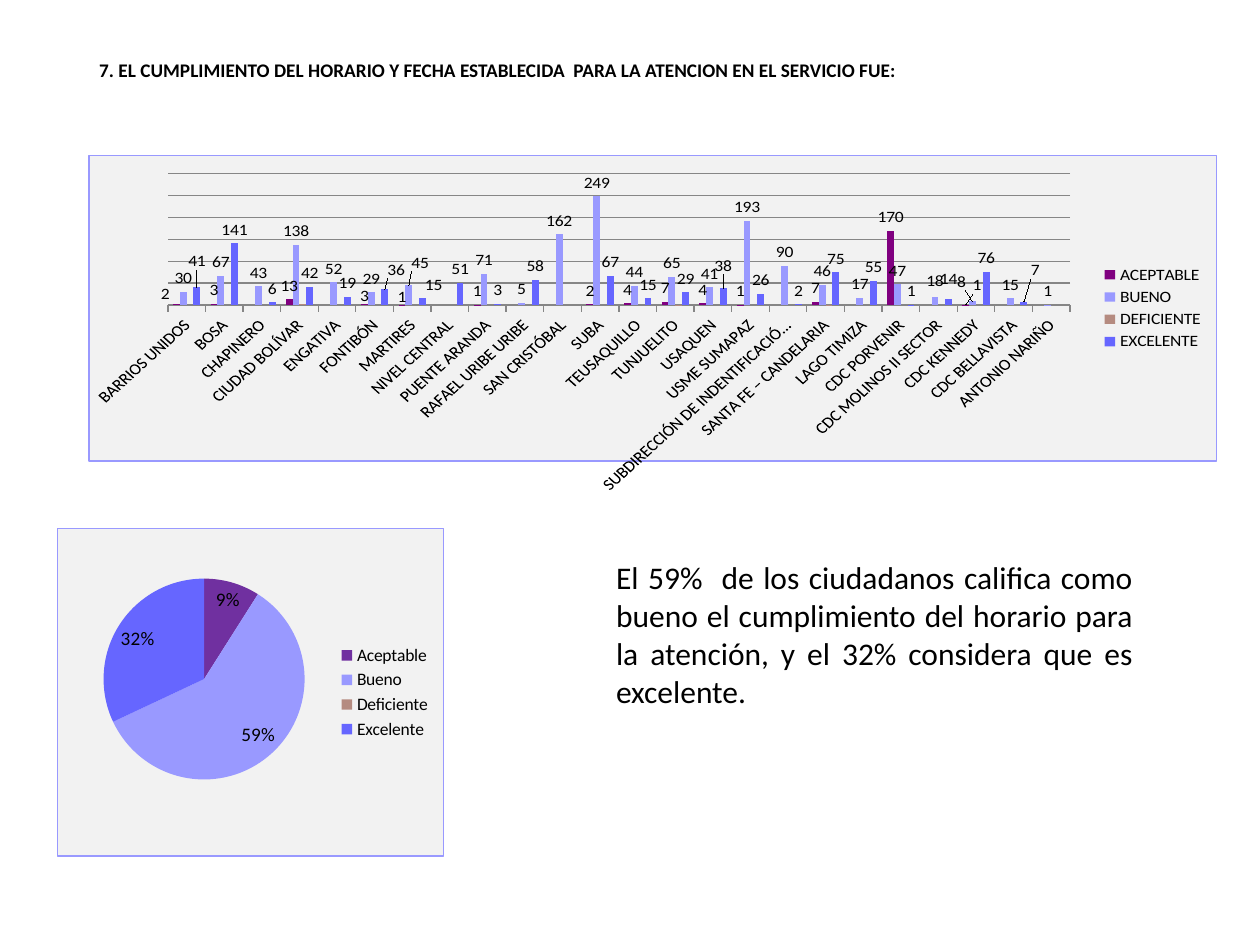
import pptx
import pptx.chart.data
import pptx.dml.color
import pptx.enum.chart
import pptx.enum.text
import pptx.oxml
import pptx.oxml.ns
import pptx.util
from dataclasses import dataclass

Cm, Pt = pptx.util.Cm, pptx.util.Pt
CHART = pptx.enum.chart
TEXT = pptx.enum.text
qn = pptx.oxml.ns.qn
NAMESPACES = pptx.oxml.ns.nsdecls("c", "a")


@dataclass(frozen=True)
class Theme:
    font: str = "Calibri"
    ink: str = "000000"
    panel: str = "F2F2F2"
    border: str = "9999FF"
    grid: str = "868686"
    title_size: int = 11
    body_size: int = 18
    chart_size: int = 10
    percent_size: int = 11
    localities: tuple = ("800080", "9999FF", "B58B80", "6666FF")
    overall: tuple = ("7030A0", "9999FF", "B58B80", "6666FF")


THEME = Theme()

TITLE = ("7. EL CUMPLIMIENTO DEL HORARIO Y FECHA ESTABLECIDA  PARA LA "
         "ATENCION EN EL SERVICIO FUE:")
FINDING = ("El 59%  de los ciudadanos califica como bueno el cumplimiento del "
           "horario para la atención, y el 32% considera que es excelente. ")

# Locality: aceptable, bueno, deficiente, excelente
RATINGS = {
    "BARRIOS UNIDOS": (2, 30, None, 41),
    "BOSA": (3, 67, None, 141),
    "CHAPINERO": (None, 43, None, 6),
    "CIUDAD BOLÍVAR": (13, 138, 3, 42),
    "ENGATIVA": (None, 52, None, 19),
    "FONTIBÓN": (3, 29, None, 36),
    "MARTIRES": (1, 45, None, 15),
    "NIVEL CENTRAL": (None, None, None, 51),
    "PUENTE ARANDA": (1, 71, None, 3),
    "RAFAEL URIBE URIBE": (None, 5, None, 58),
    "SAN CRISTÓBAL": (None, 162, None, None),
    "SUBA": (2, 249, None, 67),
    "TEUSAQUILLO": (4, 44, None, 15),
    "TUNJUELITO": (7, 65, 1, 29),
    "USAQUEN": (4, 41, None, 38),
    "USME SUMAPAZ": (1, 193, None, 26),
    "SUBDIRECCIÓN DE INDENTIFICACIÓN Y CARACTERIZACIÓN": (None, 90, None, 2),
    "SANTA FE – CANDELARIA": (7, 46, 1, 75),
    "LAGO TIMIZA": (None, 17, None, 55),
    "CDC PORVENIR": (170, 47, None, 1),
    "CDC MOLINOS II SECTOR": (None, 18, None, 14),
    "CDC KENNEDY": (1, 8, None, 76),
    "CDC BELLAVISTA": (None, 15, None, 7),
    "ANTONIO NARIÑO": (None, 1, None, None),
}
LEVELS = ("ACEPTABLE", "BUENO", "DEFICIENTE", "EXCELENTE")
LABELLED = ("ACEPTABLE", "BUENO", "EXCELENTE")
OVERALL = {"Aceptable": 9, "Bueno": 59, "Deficiente": 0, "Excelente": 32}

# Shifts that keep crowded labels apart, as fractions of the chart
LABEL_SHIFTS = {
    "ACEPTABLE": {0: (-0.01, 0.01), 5: (0, 0.02), 6: (0, 0.02), 21: (0.01, -0.02)},
    "BUENO": {6: (0.01, -0.03), 20: (0, -0.01), 21: (-0.01, -0.02)},
    "EXCELENTE": {0: (0, -0.04), 5: (0.01, -0.02), 6: (0.01, 0),
                  14: (0, -0.03), 20: (0, -0.02), 22: (0.01, -0.06)},
}


def rgb(code):
    return pptx.dml.color.RGBColor.from_string(code)


def apply(target, values):
    for name, value in values.items():
        setattr(target, name, value)


def style_font(font, size, bold=False):
    apply(font, {"name": THEME.font, "size": Pt(size), "bold": bold})
    font.color.rgb = rgb(THEME.ink)


def fill_solid(fill, code):
    fill.solid()
    fill.fore_color.rgb = rgb(code)


def add_text(slide, box, text, size, bold, frame_format, paragraph_format):
    frame = slide.shapes.add_textbox(*map(Cm, box)).text_frame
    apply(frame, {"word_wrap": True, **frame_format})
    paragraph = frame.paragraphs[0]
    apply(paragraph, paragraph_format)
    run = paragraph.add_run()
    run.text = text
    style_font(run.font, size, bold)


def manual_layout(values):
    """Build a layout element from tag and value pairs."""
    tags = "".join(f'<c:{tag} val="{value}"/>' for tag, value in values.items())
    return pptx.oxml.parse_xml(
        f"<c:layout {NAMESPACES}><c:manualLayout>{tags}</c:manualLayout></c:layout>")


def add_chart(slide, kind, box, data, plot_box):
    """Add a chart on a bordered panel with its legend at the right."""
    chart = slide.shapes.add_chart(kind, *map(Cm, box), data).chart
    apply(chart, {"has_title": False, "has_legend": True})
    style_font(chart.font, THEME.chart_size)
    apply(chart.legend, {"position": CHART.XL_LEGEND_POSITION.RIGHT,
                         "include_in_layout": False})

    # Panel fill and border
    chart_space = chart.element
    chart_space.find(qn("c:chart")).addnext(pptx.oxml.parse_xml(
        f'<c:spPr {NAMESPACES}><a:solidFill><a:srgbClr val="{THEME.panel}"/>'
        f'</a:solidFill><a:ln w="{Pt(0.75)}"><a:solidFill>'
        f'<a:srgbClr val="{THEME.border}"/></a:solidFill></a:ln></c:spPr>'))

    # Plot position
    plot_area = chart_space.find(".//" + qn("c:plotArea"))
    automatic = plot_area.find(qn("c:layout"))
    if automatic is not None:
        plot_area.remove(automatic)
    plot_area.insert(0, manual_layout({
        "layoutTarget": "inner", "xMode": "edge", "yMode": "edge",
        **dict(zip("xywh", plot_box))}))
    return chart


def label_bars(series):
    outside = CHART.XL_LABEL_POSITION.OUTSIDE_END
    apply(series.data_labels, {"show_value": True, "position": outside})
    for index, (x, y) in LABEL_SHIFTS[series.name].items():
        series.points[index].data_label.position = outside
        label = series.data_labels._element.xpath(
            f"c:dLbl[c:idx/@val='{index}']")[0]
        label.find(qn("c:idx")).addnext(manual_layout({"x": x, "y": y}))


def add_localities_chart(slide):
    data = pptx.chart.data.CategoryChartData()
    data.categories = list(RATINGS)
    for level, values in zip(LEVELS, zip(*RATINGS.values())):
        data.add_series(level, values)
    chart = add_chart(slide, CHART.XL_CHART_TYPE.COLUMN_CLUSTERED,
                      (1.78, 3.12, 22.76, 6.83), data, (0.07, 0.06, 0.8, 0.43))
    apply(chart.plots[0], {"gap_width": 150, "vary_by_categories": False})
    for series, color in zip(chart.plots[0].series, THEME.localities):
        fill_solid(series.format.fill, color)
        if series.name in LABELLED:
            label_bars(series)

    # Axes
    apply(chart.value_axis, {"visible": False, "has_major_gridlines": True})
    localities = chart.category_axis
    localities.major_tick_mark = CHART.XL_TICK_MARK.OUTSIDE
    style_font(localities.tick_labels.font, THEME.chart_size)
    localities._element.find(".//" + qn("a:bodyPr")).set("rot", str(-45 * 60000))
    for line in (chart.value_axis.major_gridlines.format.line,
                 localities.format.line):
        line.width = Pt(0.75)
        line.color.rgb = rgb(THEME.grid)


def add_overall_chart(slide):
    data = pptx.chart.data.CategoryChartData()
    data.categories = list(OVERALL)
    data.add_series("Series 1", list(OVERALL.values()))
    chart = add_chart(slide, CHART.XL_CHART_TYPE.PIE,
                      (1.14, 10.64, 7.82, 6.63), data, (0.12, 0.15, 0.52, 0.62))
    shares = chart.plots[0].series[0]
    for index, color in enumerate(THEME.overall):
        fill_solid(shares.points[index].format.fill, color)
    labels = shares.data_labels
    apply(labels, {"show_percentage": True, "show_value": False,
                   "number_format": "0%", "number_format_is_linked": False,
                   "position": CHART.XL_LABEL_POSITION.BEST_FIT})
    style_font(labels.font, THEME.percent_size)


def main():
    deck = pptx.Presentation()
    apply(deck, {"slide_width": Cm(25.4), "slide_height": Cm(19.05)})
    slide = deck.slides.add_slide(deck.slide_layouts[6])

    # Question
    add_text(slide, (1.75, 0.58, 21.9, 1.7), TITLE, THEME.title_size, True,
             {"vertical_anchor": TEXT.MSO_ANCHOR.MIDDLE}, {"line_spacing": 0.9})
    # Results
    add_localities_chart(slide)
    add_overall_chart(slide)
    # Finding
    add_text(slide, (12.17, 11.13, 10.92, 3.33), FINDING, THEME.body_size, False,
             {"auto_size": TEXT.MSO_AUTO_SIZE.SHAPE_TO_FIT_TEXT},
             {"alignment": TEXT.PP_ALIGN.JUSTIFY})
    deck.save("out.pptx")


if __name__ == "__main__":
    main()
